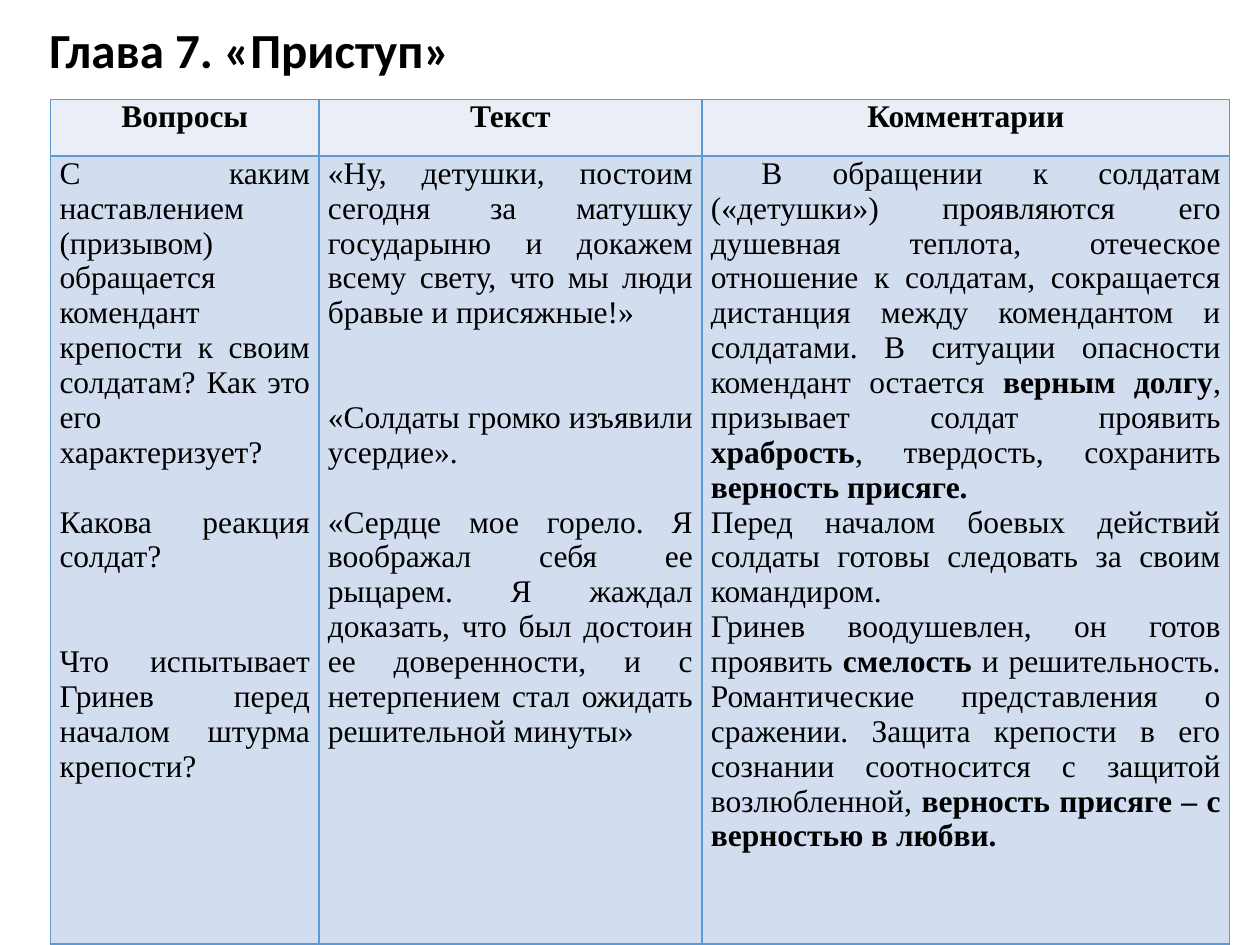
from lxml.etree import SubElement
from pptx import Presentation
from pptx.dml.color import RGBColor as Rgb
from pptx.enum.text import MSO_ANCHOR as Anchor, MSO_AUTO_SIZE as AutoSize, PP_ALIGN as Align
from pptx.oxml.ns import qn
from pptx.util import Cm, Pt

COLORS = {
    "text": "000000",
    "title": "FFFFFF",
    "header": "EAEFF7",
    "body": "D2DEEF",
    "border": "5B9BD5",
}
TITLE_FONT = {"name": "Calibri", "size": Pt(28), "bold": True}
TABLE_FONT = {"name": "Times New Roman", "size": Pt(18)}
CELL_FORMAT = {
    "margin_left": Cm(0.18),
    "margin_right": Cm(0.18),
    "margin_top": 0,
    "margin_bottom": 0,
    "vertical_anchor": Anchor.TOP,
}
COLUMN_WIDTHS = (5.41, 7.72, 10.64)
ROW_HEIGHTS = (1.14, 15.88)
LINE_PT = 19.93
FIRST_INDENT = Cm(1.02)

HEADERS = ("Вопросы", "Текст", "Комментарии")
QUESTIONS = (
    (0, ["С каким наставлением (призывом) обращается комендант крепости "
         "к своим солдатам? Как это его характеризует?"]),
    (1, ["Какова реакция солдат?"]),
    (2, ["Что испытывает Гринев перед началом штурма крепости?"]),
)
QUOTES = (
    (0, ["«Ну, детушки, постоим сегодня за матушку государыню и докажем "
         "всему свету, что мы люди бравые и присяжные!»"]),
    (2, ["«Солдаты громко изъявили усердие»."]),
    (1, ["«Сердце мое горело. Я воображал себя ее рыцарем. Я жаждал доказать, "
         "что был достоин ее доверенности, и с нетерпением стал ожидать "
         "решительной минуты»"]),
)
COMMENTS = (
    (0, ["В обращении к солдатам («детушки») проявляются его душевная теплота, "
         "отеческое отношение к солдатам, сокращается дистанция между "
         "комендантом и солдатами. В ситуации опасности комендант остается ",
         "верным долгу", ", призывает солдат проявить ", "храбрость",
         ", твердость, сохранить ", "верность присяге."]),
    (0, ["Перед началом боевых действий солдаты готовы следовать за своим "
         "командиром."]),
    (0, ["Гринев воодушевлен, он готов проявить ", "смелость",
         " и решительность. Романтические представления о сражении. Защита "
         "крепости в его сознании соотносится с защитой возлюбленной, ",
         "верность присяге – с верностью в любви."]),
)


def apply(target, values):
    for key, value in values.items():
        setattr(target, key, value)


def paint(fill, color):
    fill.solid()
    fill.fore_color.rgb = Rgb.from_string(COLORS[color])


def add_run(paragraph, text, font, bold):
    run = paragraph.add_run()
    run.text = text
    apply(run.font, {**font, "bold": bold})
    run.font.color.rgb = Rgb.from_string(COLORS["text"])


def place_title(title, left, top, width, height):
    apply(title, {"left": left, "top": top, "width": width, "height": height})
    paint(title.fill, "title")
    color = title.fill._xPr.find(qn("a:solidFill"))[0]
    SubElement(color, qn("a:alpha"), val="69000")
    apply(title.text_frame, {"vertical_anchor": Anchor.MIDDLE,
                             "auto_size": AutoSize.NONE, "word_wrap": True})
    heading = title.text_frame.paragraphs[0]
    apply(heading, {"alignment": Align.LEFT, "line_spacing": 0.9})
    add_run(heading, "Глава 7. «Приступ»", TITLE_FONT, True)


def style_cell(cell, color):
    apply(cell, CELL_FORMAT)
    properties = cell._tc.get_or_add_tcPr()
    for side in ("lnL", "lnR", "lnT", "lnB"):
        line = SubElement(properties, qn(f"a:{side}"), w=str(Pt(1)))
        SubElement(SubElement(line, qn("a:solidFill")), qn("a:srgbClr"), val=COLORS["border"])
    paint(cell.fill, color)


def write_answers(cell, entries):
    for index, (gap_lines, parts) in enumerate(entries):
        frame = cell.text_frame
        paragraph = frame.add_paragraph() if index else frame.paragraphs[0]
        paragraph.alignment = Align.JUSTIFY
        if gap_lines:
            paragraph.space_before = Pt(gap_lines * LINE_PT)
        for position, text in enumerate(parts):
            add_run(paragraph, text, TABLE_FONT, position % 2 == 1)


def place_table(shapes, left, top):
    table = shapes.add_table(
        len(ROW_HEIGHTS), len(COLUMN_WIDTHS), left, top,
        Cm(sum(COLUMN_WIDTHS)), Cm(sum(ROW_HEIGHTS))).table
    for row, height in zip(table.rows, ROW_HEIGHTS):
        row.height = Cm(height)
    answers = (QUESTIONS, QUOTES, COMMENTS)
    for index, (width, header, entries) in enumerate(zip(COLUMN_WIDTHS, HEADERS, answers)):
        table.columns[index].width = Cm(width)
        head, body = table.cell(0, index), table.cell(1, index)
        style_cell(head, "header")
        style_cell(body, "body")
        heading = head.text_frame.paragraphs[0]
        heading.alignment = Align.CENTER
        add_run(heading, header, TABLE_FONT, True)
        write_answers(body, entries)
    opening = table.cell(1, 2).text_frame.paragraphs[0]
    opening._p.get_or_add_pPr().set("indent", str(FIRST_INDENT))


def main():
    deck = Presentation()
    deck.slide_width, deck.slide_height = Cm(25.4), Cm(19.05)
    slide = deck.slides.add_slide(deck.slide_layouts[5])
    place_title(slide.shapes.title, Cm(0.74), Cm(0.46), Cm(23.67), Cm(1.19))
    place_table(slide.shapes, Cm(1.02), Cm(2.01))
    deck.save("out.pptx")


if __name__ == "__main__":
    main()
